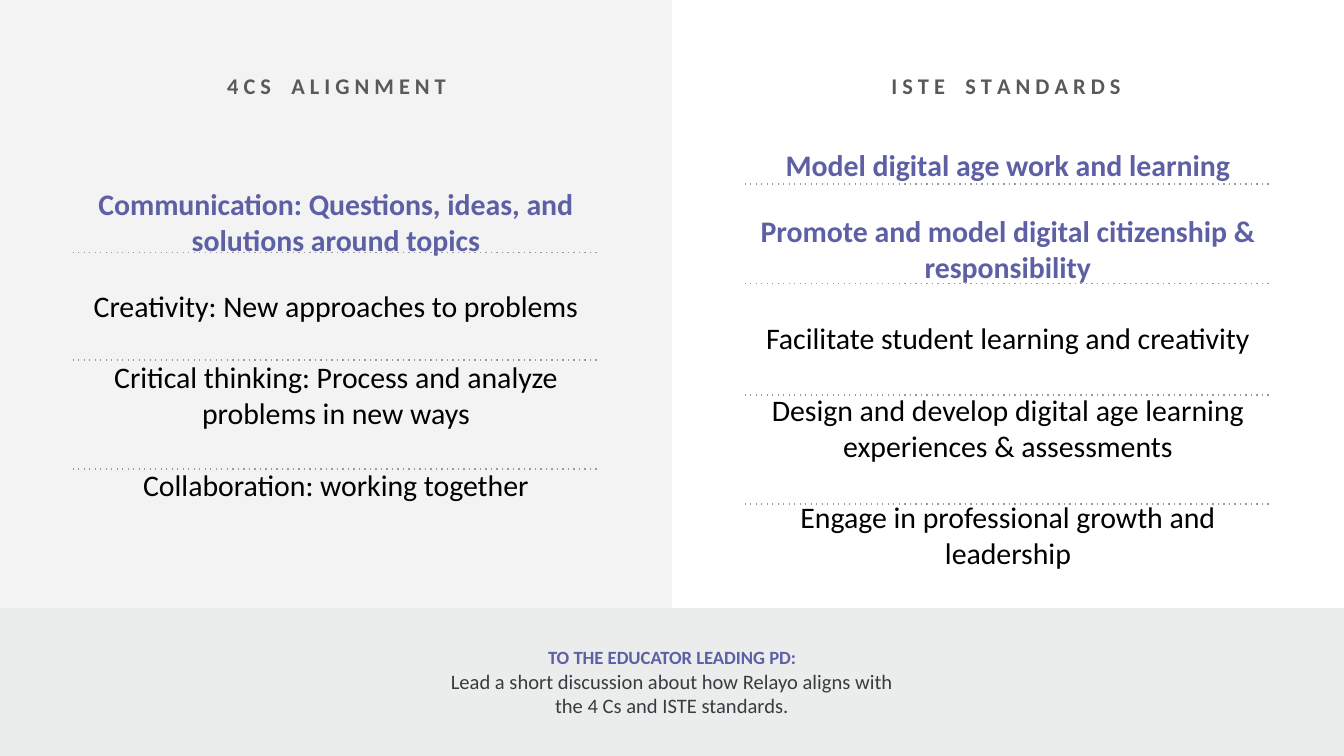
from dataclasses import dataclass

from pptx import Presentation
from pptx.dml.color import RGBColor
from pptx.enum.dml import MSO_LINE_DASH_STYLE as Dash
from pptx.enum.shapes import MSO_CONNECTOR as Connector, MSO_SHAPE as Shape
from pptx.enum.text import MSO_ANCHOR as Anchor, PP_ALIGN as Align
from pptx.oxml.ns import qn
from pptx.util import Inches, Pt


@dataclass(frozen=True)
class Theme:
    font: str = "Calibri"
    panel: str = "F3F3F3"
    footer: str = "EBECEC"
    accent: str = "5D60A5"
    body: str = "000000"
    heading: str = "595959"
    note: str = "363C3F"
    rule: str = "999999"
    item_size: float = 16
    heading_size: float = 12
    label_size: float = 10
    note_size: float = 11
    tight_gap: float = 16
    wide_gap: float = 19.2
    word_gap: float = 8.1


@dataclass(frozen=True)
class Column:
    left: float
    top: float
    heading: tuple[str, str]
    highlighted: int  # how many leading items are emphasised
    items: tuple[str, ...]
    rules: tuple[float, ...]


THEME = Theme()
PAGE_WIDTH = 10
PAGE_HEIGHT = PAGE_WIDTH * 9 / 16
FOOTER_HEIGHT = 1.1
COLUMN_WIDTH = 3.92
COLUMNS = (
    Column(0.54, 0.92, ("4 C S", "A L I G N M E N T"), 1, (
        "Communication: Questions, ideas, and solutions around topics",
        "Creativity: New approaches to problems",
        "Critical thinking: Process and analyze problems in new ways",
        "Collaboration: working together",
    ), (1.88, 2.68, 3.49)),
    Column(5.54, 1.03, ("I S T E", "S T A N D A R D S "), 2, (
        "Model digital age work and learning",
        "Promote and model digital citizenship & responsibility",
        "Facilitate student learning and creativity",
        "Design and develop digital age learning experiences & assessments",
        "Engage in professional growth and leadership",
    ), (1.37, 2.11, 2.94, 3.75)),
)


def add_span(para, text: str, size: float, color: str, bold: bool = False):
    span = para.add_run()
    span.text = text
    span.font.name = THEME.font
    span.font.size = Pt(size)
    span.font.bold = bold
    span.font.color.rgb = RGBColor.from_string(color)
    return span


def prepare_frame(box, anchor: Anchor):
    frame = box.text_frame
    frame.word_wrap = True
    frame.vertical_anchor = anchor
    frame.margin_left = frame.margin_right = Inches(0.1)
    frame.margin_top = frame.margin_bottom = Inches(0.1)
    return frame


def add_para(frame, first: bool):
    para = frame.paragraphs[0] if first else frame.add_paragraph()
    para.alignment = Align.CENTER
    return para


def add_panel(page, left: float, top: float, width: float, height: float, color: str):
    panel = page.shapes.add_shape(
        Shape.RECTANGLE, Inches(left), Inches(top), Inches(width), Inches(height))
    panel.shadow.inherit = False
    panel.fill.solid()
    panel.fill.fore_color.rgb = RGBColor.from_string(color)
    panel.line.fill.background()
    return panel


def add_heading(page, column: Column) -> None:
    box = page.shapes.add_textbox(
        Inches(column.left + 0.06), Inches(0.44), Inches(3.81), Inches(0.37))
    para = add_para(prepare_frame(box, Anchor.TOP), True)
    style = (THEME.heading_size, THEME.heading, True)
    first, second = column.heading
    add_span(para, first, *style)
    # Widen the single space between the two letter-spaced words
    gap = add_span(para, " ", *style)
    gap.font._element.set("spc", str(round(THEME.word_gap * 100)))
    add_span(para, second, *style)


def add_items(page, column: Column) -> None:
    box = page.shapes.add_textbox(
        Inches(column.left), Inches(column.top), Inches(COLUMN_WIDTH), Inches(3.28))
    frame = prepare_frame(box, Anchor.MIDDLE)
    for index, item in enumerate(column.items):
        para = add_para(frame, index == 0)
        if index:
            para.space_before = Pt(THEME.tight_gap if index == 1 else THEME.wide_gap)
        strong = index < column.highlighted
        add_span(para, item, THEME.item_size,
                 THEME.accent if strong else THEME.body, strong)


def add_rule(page, left: float, top: float) -> None:
    rule = page.shapes.add_connector(
        Connector.STRAIGHT, Inches(left), Inches(top),
        Inches(left + COLUMN_WIDTH), Inches(top))
    rule.line.color.rgb = RGBColor.from_string(THEME.rule)
    rule.line.width = Pt(0.75)
    rule.line.dash_style = Dash.ROUND_DOT
    properties = rule._element.spPr
    # The widely spaced "dot" pattern has no public constant
    properties.find(qn("a:ln")).find(qn("a:prstDash")).set("val", "dot")
    properties.append(properties.makeelement(qn("a:effectLst"), {}))


def add_footer(page) -> None:
    footer = add_panel(page, 0, PAGE_HEIGHT - FOOTER_HEIGHT,
                       PAGE_WIDTH, FOOTER_HEIGHT, THEME.footer)
    frame = prepare_frame(footer, Anchor.MIDDLE)
    para = add_para(frame, True)
    add_span(para, "TO THE EDUCATOR LEADING PD:", THEME.label_size, THEME.accent, True)
    para.add_line_break()
    add_span(para, "Lead a short discussion about how Relayo aligns with",
             THEME.note_size, THEME.note)
    add_span(add_para(frame, False), "the 4 Cs and ISTE standards.",
             THEME.note_size, THEME.note)


def main() -> None:
    deck = Presentation()
    deck.slide_width, deck.slide_height = Inches(PAGE_WIDTH), Inches(PAGE_HEIGHT)
    page = deck.slides.add_slide(deck.slide_layouts[6])

    # Left background
    add_panel(page, 0, 0, PAGE_WIDTH / 2, PAGE_HEIGHT, THEME.panel)

    # Two columns of standards
    for column in COLUMNS:
        add_items(page, column)
        add_heading(page, column)
        for top in column.rules:
            add_rule(page, column.left, top)

    # Note to the educator
    add_footer(page)
    deck.save("out.pptx")


if __name__ == "__main__":
    main()
